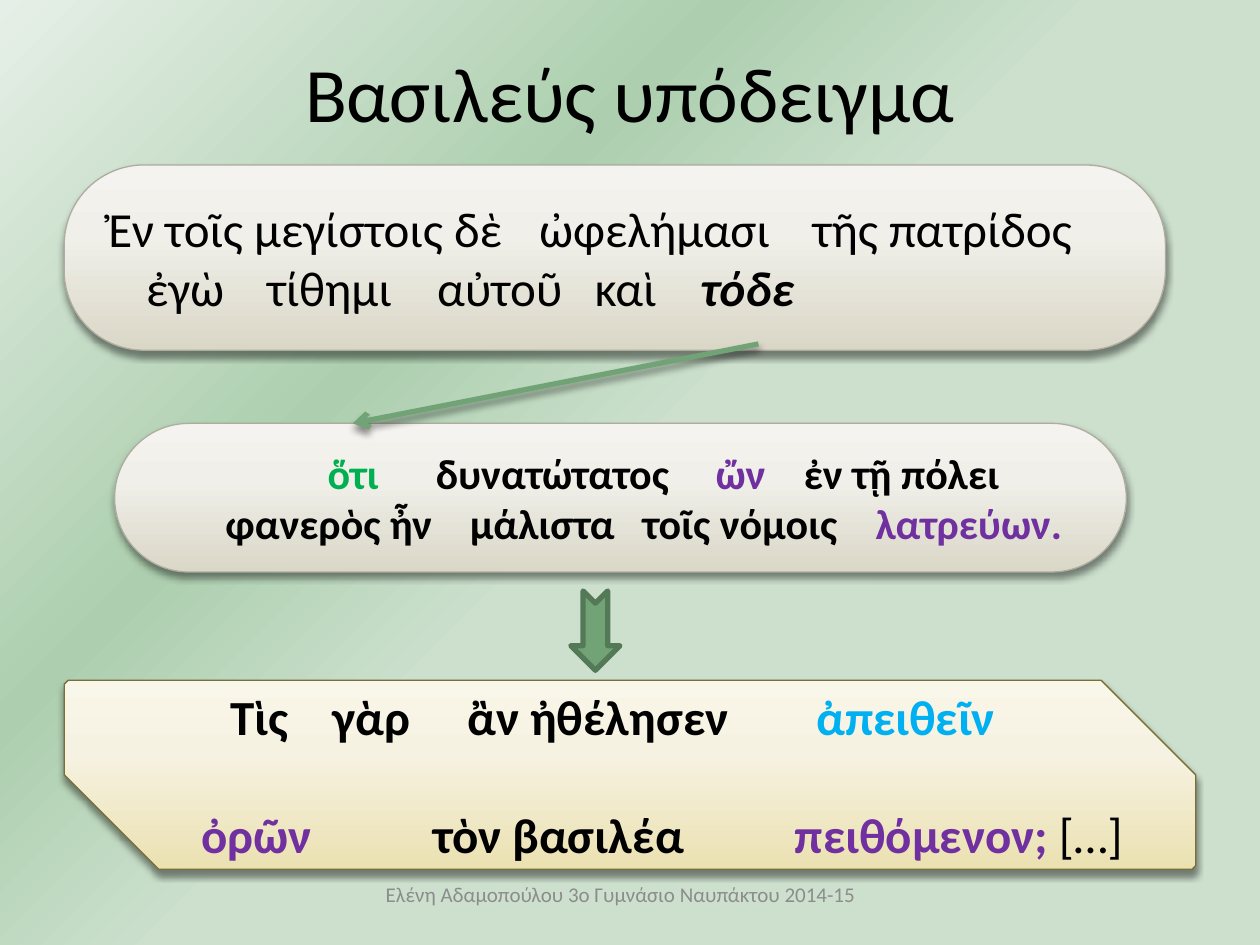
from dataclasses import dataclass
from lxml import etree
from pptx import Presentation
from pptx import util as u
from pptx.dml import color
from pptx.enum import shapes, text
from pptx.oxml import ns


@dataclass(frozen=True)
class Theme:
    font: str = "Calibri"
    title: int = 44
    large: int = 28
    medium: int = 24
    small: int = 12
    ink: str = "000000"
    muted: str = "8C8C8C"
    conjunction: str = "00B050"
    participle: str = "7030A0"
    infinitive: str = "00B0F0"
    green: str = "72A376"
    green_edge: str = "547957"
    stone_edge: str = "AEAC9F"
    sand_edge: str = "796F39"
    backdrop: tuple = ((50, "CCE0CD"), (67, "ADCFAF"), (100, "E6EFE7"))
    stone: tuple = ((0, "DAD7C7"), (62, "F0EFE9"), (100, "F4F3EF"))
    sand: tuple = ((0, "EBE1B1"), (62, "F6F2E2"), (100, "F9F6EA"))


THEME = Theme()


def inches(values):
    return [u.Inches(value) for value in values]


def rgb(code):
    return color.RGBColor.from_string(code)


def add_node(parent, tag, **attributes):
    values = {key: str(value) for key, value in attributes.items()}
    return etree.SubElement(parent, ns.qn(tag), values)


def set_gradient(fill, holder, stops):
    fill.gradient()
    gradient = holder.find(".//" + ns.qn("a:gradFill"))
    for child in list(gradient):
        gradient.remove(child)
    stop_list = add_node(gradient, "a:gsLst")
    for position, code in stops:
        stop = add_node(stop_list, "a:gs", pos=position * 1000)
        add_node(stop, "a:srgbClr", val=code)
    return gradient


def paint_backdrop(page):
    gradient = set_gradient(page.background.fill, page.element, THEME.backdrop)
    focus = add_node(gradient, "a:path", path="circle")
    add_node(focus, "a:fillToRect", l=100000, t=100000)


def set_line(line, code, width):
    line.color.rgb = rgb(code)
    line.width = u.Pt(width)


def add_shadow(shape):
    effects = add_node(shape.element.spPr, "a:effectLst")
    shadow = add_node(effects, "a:outerShdw", blurRad=u.Pt(4), dist=u.Pt(3),
                      dir=5400000, algn="ctr", rotWithShape=0)
    add_node(add_node(shadow, "a:srgbClr", val=THEME.ink), "a:alpha", val=43000)


def format_span(span, size, code=THEME.ink, bold=False, italic=False):
    span.font.name = THEME.font
    span.font.size = u.Pt(size)
    span.font.color.rgb = rgb(code)
    span.font.bold = bold
    span.font.italic = italic


def add_caption(page, box, words, size, code):
    frame = page.shapes.add_textbox(*inches(box)).text_frame
    frame.word_wrap = True
    frame.vertical_anchor = text.MSO_ANCHOR.MIDDLE
    frame.text = words
    para = frame.paragraphs[0]
    para.alignment = text.PP_ALIGN.CENTER
    format_span(para.runs[0], size, code)


def write_row(para, row, origin, size):
    para.alignment = text.PP_ALIGN.LEFT
    tabs = add_node(para._p.get_or_add_pPr(), "a:tabLst")
    for start, words, style in row:
        if start:
            add_node(tabs, "a:tab", pos=u.Inches(start - origin), algn="l")
        span = para.add_run()
        span.text = "\t" + words if start else words
        format_span(span, size, **style)


def add_panel(page, box, preset, adjustments, stops, edge, inset, rows, size, gap=0):
    panel = page.shapes.add_shape(preset, *inches(box))
    for index, value in enumerate(adjustments):
        panel.adjustments[index] = value
    set_gradient(panel.fill, panel.element.spPr, stops).append(
        etree.Element(ns.qn("a:lin"), ang="16200000", scaled="0"))
    set_line(panel.line, edge, 0.75)
    add_shadow(panel)
    frame = panel.text_frame
    frame.word_wrap = True
    frame.vertical_anchor = text.MSO_ANCHOR.MIDDLE
    for index, row in enumerate(rows):
        para = frame.add_paragraph() if index else frame.paragraphs[0]
        if index:
            para.space_before = u.Pt(gap)
        write_row(para, row, box[0] + inset + 0.1, size)


def add_rounded_panel(page, box, roundness, rows, size):
    inset = roundness * box[3] * 0.29
    add_panel(page, box, shapes.MSO_SHAPE.ROUNDED_RECTANGLE, [roundness],
              THEME.stone, THEME.stone_edge, inset, rows, size)


def add_snipped_panel(page, box, rows, size):
    snip = 0.5
    add_panel(page, box, shapes.MSO_SHAPE.SNIP_2_DIAG_RECTANGLE, [0.02, snip],
              THEME.sand, THEME.sand_edge, snip * box[3] / 2, rows, size, gap=33.6)


def add_pointer(page, start, end):
    pointer = page.shapes.add_connector(
        shapes.MSO_CONNECTOR.STRAIGHT, *inches(start + end))
    set_line(pointer.line, THEME.green, 3)
    add_node(pointer.line._get_or_add_ln(), "a:tailEnd", type="arrow")
    add_shadow(pointer)


def add_block_arrow(page, box):
    arrow = page.shapes.add_shape(
        shapes.MSO_SHAPE.NOTCHED_RIGHT_ARROW, *inches(box))
    arrow.rotation = 90
    arrow.shadow.inherit = False
    arrow.fill.solid()
    arrow.fill.fore_color.rgb = rgb(THEME.green)
    set_line(arrow.line, THEME.green_edge, 3)


def main():
    deck = Presentation()
    deck.slide_width, deck.slide_height = inches((10, 7.5))
    page = deck.slides.add_slide(deck.slide_layouts[6])
    paint_backdrop(page)

    plain = {}
    strong = {"bold": True}
    participle = {"bold": True, "code": THEME.participle}
    main_clause = [
        [(0.86, "Ἐν τοῖς μεγίστοις δὲ", plain), (4.28, "ὠφελήμασι", plain),
         (6.45, "τῆς πατρίδος", plain)],
        [(1.16, "ἐγὼ", plain), (2.12, "τίθημι", plain), (3.47, "αὐτοῦ", plain),
         (4.72, "καὶ", plain), (5.56, "τόδε", {"bold": True, "italic": True})],
    ]
    that_clause = [
        [(2.6, "ὅτι", {"bold": True, "code": THEME.conjunction}),
         (3.46, "δυνατώτατος", strong), (5.68, "ὤν", participle),
         (6.38, "ἐν τῇ πόλει", strong)],
        [(1.79, "φανερὸς ἦν", strong), (3.73, "μάλιστα", strong),
         (5.1, "τοῖς νόμοις", strong), (6.95, "λατρεύων.", participle)],
    ]
    question = [
        [(1.83, "Τὶς", strong), (2.64, "γὰρ", strong), (3.71, "ἂν ἠθέλησεν", strong),
         (6.48, "ἀπειθεῖν", {"bold": True, "code": THEME.infinitive})],
        [(1.6, "ὀρῶν", participle), (3.44, "τὸν βασιλέα", strong),
         (6.31, "πειθόμενον; ", participle), (None, "[…]", plain)],
    ]

    add_caption(page, (0.5, 0.3, 9, 0.85), "Βασιλεύς υπόδειγμα",
                THEME.title, THEME.ink)
    add_caption(page, (2.48, 6.9, 4.89, 0.4),
                "Ελένη Αδαμοπούλου 3ο Γυμνάσιο Ναυπάκτου 2014-15",
                THEME.small, THEME.muted)
    add_rounded_panel(page, (0.51, 1.31, 8.74, 1.47), 0.43, main_clause, THEME.large)
    add_rounded_panel(page, (0.91, 3.36, 8.03, 1.18), 0.5, that_clause, THEME.medium)
    add_pointer(page, (6.02, 2.73), (2.8, 3.36))
    add_block_arrow(page, (4.41, 4.81, 0.63, 0.39))
    add_snipped_panel(page, (0.51, 5.4, 8.98, 1.5), question, THEME.large)
    deck.save("out.pptx")


if __name__ == "__main__":
    main()
